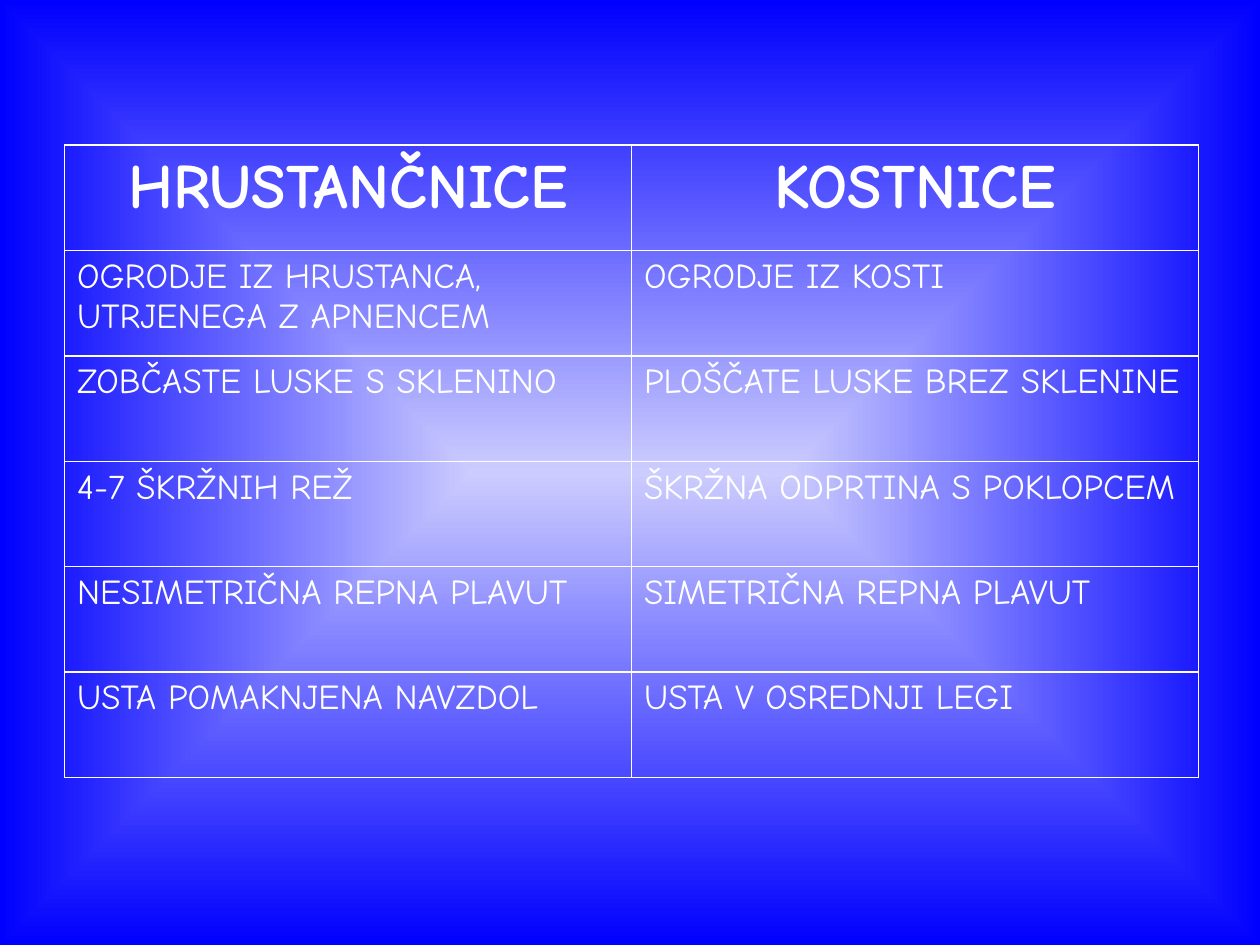
from dataclasses import dataclass

from lxml.etree import SubElement
from pptx import Presentation
from pptx.dml.color import RGBColor
from pptx.enum.text import PP_ALIGN as Align
from pptx.oxml.ns import qn
from pptx.util import Pt


@dataclass(frozen=True)
class Theme:
    font: str = "Comic Neue"
    text: str = "FFFFFF"
    border: str = "FFFFFF"
    glow: str = "CCCCFF"
    edge: str = "0000FF"
    heading_size: int = 36
    body_size: int = 20
    border_width: int = 1


COMPARISON = [
    ("HRUSTANČNICE", "KOSTNICE"),
    ("OGRODJE IZ HRUSTANCA, UTRJENEGA Z APNENCEM", "OGRODJE IZ KOSTI"),
    ("ZOBČASTE LUSKE S SKLENINO", "PLOŠČATE LUSKE BREZ SKLENINE"),
    ("4-7 ŠKRŽNIH REŽ", "ŠKRŽNA ODPRTINA S POKLOPCEM"),
    ("NESIMETRIČNA REPNA PLAVUT", "SIMETRIČNA REPNA PLAVUT"),
    ("USTA POMAKNJENA NAVZDOL", "USTA V OSREDNJI LEGI"),
]


class SlideBuilder:
    def __init__(self, slide, theme):
        self.slide = slide
        self.theme = theme

    def background(self):
        """Fill the slide with a gradient that glows from its centre."""
        fill = self.slide.background.fill
        fill.gradient()
        for stop, color in zip(fill.gradient_stops, (self.theme.glow, self.theme.edge)):
            stop.color.rgb = RGBColor.from_string(color)
        gradient = self.slide.element.find(".//" + qn("a:gradFill"))
        gradient.remove(gradient.find(qn("a:lin")))
        shading = SubElement(gradient, qn("a:path"), path="shape")
        SubElement(shading, qn("a:fillToRect"), l="50000", t="50000", r="50000", b="50000")

    def table(self, rows, left, top, column_width, row_height):
        """Add a table whose first row holds the headings."""
        row_count, column_count = len(rows), len(rows[0])
        table = self.slide.shapes.add_table(
            row_count, column_count, Pt(left), Pt(top),
            Pt(column_width * column_count), Pt(row_height * row_count),
        ).table
        table.horz_banding = False
        for r, row in enumerate(rows):
            table.rows[r].height = Pt(row_height)
            for c, wording in enumerate(row):
                self.cell(table.cell(r, c), wording, heading=r == 0)

    def cell(self, cell, wording, heading):
        self.cell_borders(cell)
        cell.fill.background()
        cell.text_frame.text = wording
        paragraph = cell.text_frame.paragraphs[0]
        paragraph.alignment = Align.CENTER if heading else Align.LEFT
        font = paragraph.runs[0].font
        font.name = self.theme.font
        font.size = Pt(self.theme.heading_size if heading else self.theme.body_size)
        font.bold = heading
        font.color.rgb = RGBColor.from_string(self.theme.text)

    def cell_borders(self, cell):
        properties = cell._tc.get_or_add_tcPr()
        for side in ("lnL", "lnR", "lnT", "lnB"):
            line = SubElement(properties, qn(f"a:{side}"), w=str(Pt(self.theme.border_width)))
            solid = SubElement(line, qn("a:solidFill"))
            SubElement(solid, qn("a:srgbClr"), val=self.theme.border)


def main():
    presentation = Presentation()
    presentation.slide_width, presentation.slide_height = Pt(720), Pt(540)
    blank = presentation.slide_layouts[6]
    builder = SlideBuilder(presentation.slides.add_slide(blank), Theme())
    builder.background()
    builder.table(COMPARISON, left=36.85, top=82.88, column_width=324, row_height=60.25)
    presentation.save("out.pptx")


if __name__ == "__main__":
    main()
